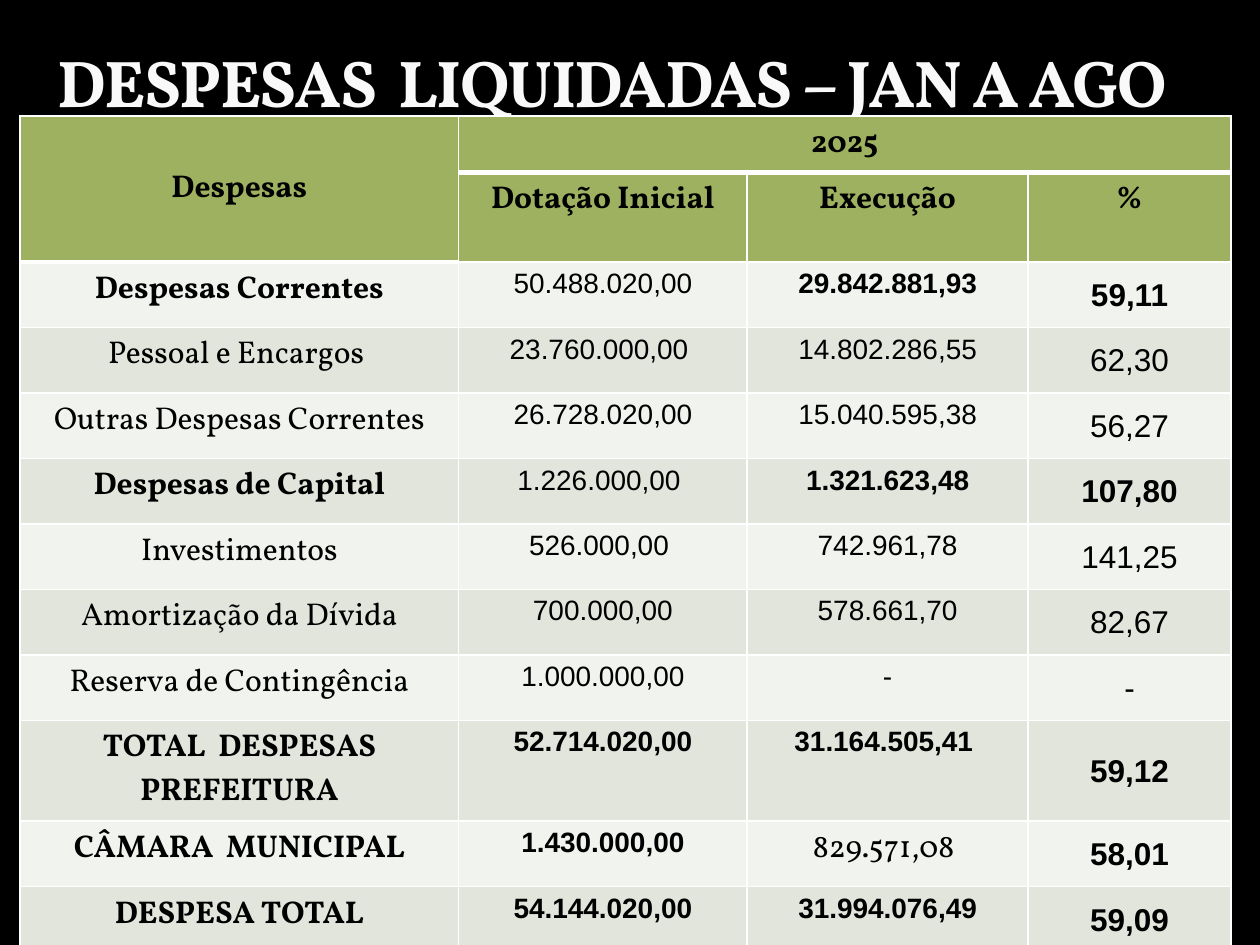
from typing import NamedTuple

from lxml import etree
from pptx import Presentation
from pptx.dml.color import RGBColor
from pptx.enum import text
from pptx.oxml import ns
from pptx.util import Inches, Pt

SERIF, SANS = "Vollkorn", "Arial"
BLACK, WHITE, OFF_WHITE = "000000", "FFFFFF", "F9F9F9"
GREEN, LIGHT, SHADE = "9EB160", "F0F3EE", "E1E5DC"
COLUMN_WIDTHS = [3.48, 2.29, 2.23, 1.61]
HEADER_HEIGHTS = [0.45, 0.71]
ROW_HEIGHT, TALL_ROW = 0.52, 0.8


class Span(NamedTuple):
    words: str
    size: float = 18
    font: str = SERIF
    bold: bool = True
    color: str = BLACK


class Expense(NamedTuple):
    name: str
    budget: str
    spent: str
    percent: str
    bold: bool = False
    bold_budget: bool = False
    height: float = ROW_HEIGHT


EXPENSES = [
    Expense("Despesas Correntes", "50.488.020,00", "29.842.881,93", "59,11", True),
    Expense("Pessoal e Encargos ", "23.760.000,00 ", "14.802.286,55", "62,30"),
    Expense("Outras Despesas Correntes", "26.728.020,00", "15.040.595,38", "56,27"),
    Expense("Despesas de Capital", "1.226.000,00 ", "1.321.623,48", "107,80", True),
    Expense("Investimentos", "526.000,00 ", "742.961,78", "141,25"),
    Expense("Amortização da Dívida", "700.000,00", "578.661,70", "82,67"),
    Expense("Reserva de Contingência", "1.000.000,00", "-", "-"),
    Expense("TOTAL  DESPESAS PREFEITURA", "52.714.020,00", "31.164.505,41 ", "59,12",
            True, True, TALL_ROW),
    Expense("CÂMARA  MUNICIPAL", "1.430.000,00", "829.571,08", "58,01", True, True),
    Expense("DESPESA TOTAL", "54.144.020,00", "31.994.076,49", "59,09", True, True),
]


def rgb(code: str) -> RGBColor:
    return RGBColor.from_string(code)


def add_span(para, span: Span):
    run = para.add_run()
    run.text = span.words
    run.font.size = Pt(span.size)
    run.font.name = span.font
    run.font.bold = span.bold
    run.font.color.rgb = rgb(span.color)
    return run


def add_border(cell, side: str, points: float) -> None:
    """Add one white cell edge; side is L, R, T or B, added in that order."""
    props = cell._tc.get_or_add_tcPr()
    line = etree.Element(ns.qn(f"a:ln{side}"), w=str(Pt(points)))
    fill = etree.SubElement(line, ns.qn("a:solidFill"))
    etree.SubElement(fill, ns.qn("a:srgbClr"), val=WHITE)
    props.insert("LRTB".index(side), line)


def fill_cell(cell, color: str, spans: list[Span], bottom: float = 1) -> None:
    cell.fill.solid()
    cell.fill.fore_color.rgb = rgb(color)
    for side in "LRTB":
        add_border(cell, side, bottom if side == "B" else 1)
    para = cell.text_frame.paragraphs[0]
    para.alignment = text.PP_ALIGN.CENTER
    for span in spans:
        add_span(para, span)


def add_title(page, words: str) -> None:
    box = page.shapes.add_textbox(Inches(0.36), Inches(0.26), Inches(9.41), Inches(0.76))
    frame = box.text_frame
    frame.word_wrap = True
    frame.vertical_anchor = text.MSO_ANCHOR.BOTTOM
    frame.margin_top = 0
    frame.margin_bottom = Inches(0.06)
    run = add_span(frame.paragraphs[0], Span(words, 37.8, color=OFF_WHITE))
    run.font._element.set("spc", "-100")


def add_header(table) -> None:
    corner, year = table.cell(0, 0), table.cell(0, 1)
    corner.merge(table.cell(1, 0))
    year.merge(table.cell(0, 3))
    fill_cell(corner, GREEN, [Span("Despesas")], bottom=3)
    corner.vertical_anchor = text.MSO_ANCHOR.MIDDLE
    fill_cell(year, GREEN, [Span("2025")], bottom=3)
    for column, label in enumerate(["Dotação Inicial", "Execução", "%"], 1):
        fill_cell(table.cell(1, column), GREEN, [Span(label)])


def add_expense(table, row: int, expense: Expense) -> None:
    color = SHADE if row % 2 else LIGHT
    spent = [Span(expense.spent, 16, SANS, expense.bold)]
    if expense.name == "CÂMARA  MUNICIPAL":
        spent = [Span(expense.spent, bold=False), Span(" ", 16, SANS)]
    contents = [
        [Span(expense.name, bold=expense.bold)],
        [Span(expense.budget, 16, SANS, expense.bold_budget)],
        spent,
        [Span(expense.percent, 18, SANS, expense.bold)],
    ]
    for column, spans in enumerate(contents):
        fill_cell(table.cell(row, column), color, spans)
    percent = table.cell(row, 3)
    percent.vertical_anchor = text.MSO_ANCHOR.MIDDLE
    percent.margin_left = percent.margin_right = percent.margin_top = Inches(0.01)
    percent.margin_bottom = 0


def add_expense_table(page) -> None:
    heights = HEADER_HEIGHTS + [expense.height for expense in EXPENSES]
    table = page.shapes.add_table(
        len(heights), len(COLUMN_WIDTHS), Inches(0.16), Inches(0.92),
        Inches(sum(COLUMN_WIDTHS)), Inches(sum(heights))).table
    for column, width in zip(table.columns, COLUMN_WIDTHS):
        column.width = Inches(width)
    for row, height in zip(table.rows, heights):
        row.height = Inches(height)
    add_header(table)
    for row, expense in enumerate(EXPENSES, len(HEADER_HEIGHTS)):
        add_expense(table, row, expense)


def main() -> None:
    deck = Presentation()
    deck.slide_width, deck.slide_height = Inches(10), Inches(7.5)
    page = deck.slides.add_slide(deck.slide_layouts[6])
    page.background.fill.solid()
    page.background.fill.fore_color.rgb = rgb(BLACK)
    add_title(page, "DESPESAS  LIQUIDADAS – JAN A AGO")
    add_expense_table(page)
    deck.save("out.pptx")


if __name__ == "__main__":
    main()
